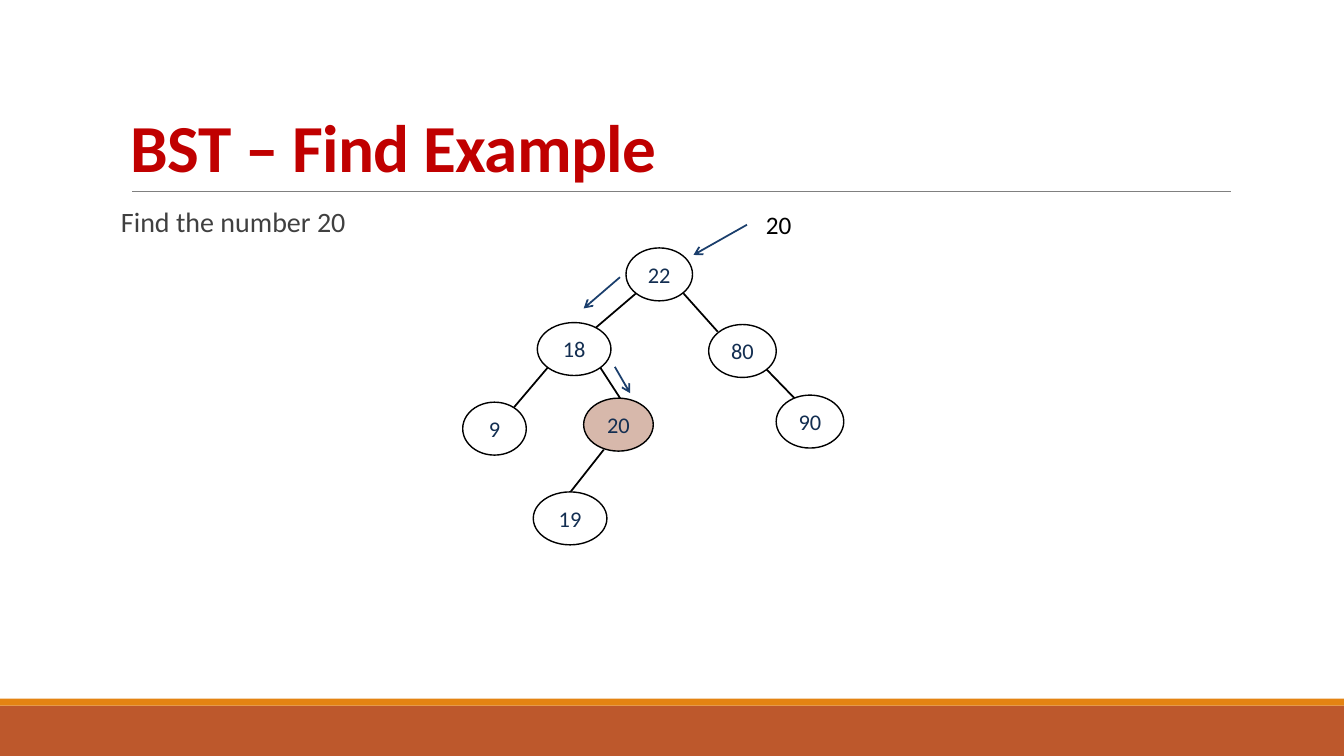
from pptx import Presentation
from pptx.dml.color import RGBColor
from pptx.enum.shapes import MSO_CONNECTOR, MSO_SHAPE
from pptx.enum.text import MSO_ANCHOR, PP_ALIGN
from pptx.oxml.ns import qn
from pptx.util import Inches, Pt
from lxml.etree import SubElement

WIDTH, HEIGHT = Inches(13.333), Inches(7.5)

COLORS = {
    "white": "FFFFFF", "black": "000000", "red": "C00000", "text": "404040",
    "navy": "132E51", "arrow": "1A3E6C", "found": "D7B8AB", "rule": "808080",
    "rust": "BD582C", "orange": "E48312",
}

BARS = [(93.33, 6.67, "rust"), (92.4, 0.93, "orange")]

NODES = [
    ("22", 46.58, 32.8, 4.95, "white"),
    ("18", 39.98, 42.67, 5.48, "white"),
    ("80", 52.73, 42.93, 5.03, "white"),
    ("9", 34.43, 53.2, 4.73, "white"),
    ("20", 43.43, 52.67, 5.18, "found"),
    ("90", 57.75, 52.27, 5.03, "white"),
    ("19", 39.68, 65.07, 5.48, "white"),
]
DEPTH = 7

EDGES = [
    (47.33, 38.8, 44.25, 43.47),
    (50.85, 38.8, 53.4, 43.87),
    (57, 48.8, 59.4, 53.2),
    (40.8, 48.53, 38.25, 53.87),
    (44.63, 48.53, 46.58, 53.87),
    (44.93, 59.47, 42.45, 65.07),
]

STEPS = [
    (55.58, 29.73, 51.6, 33.73),
    (46.13, 36.67, 43.43, 40.8),
    (45.75, 48.53, 46.88, 52),
]


def color(name):
    return RGBColor.from_string(COLORS[name])


def place(x, y, *size):
    box = (x, y, *size)
    return [int(n * (HEIGHT if i % 2 else WIDTH) / 100) for i, n in enumerate(box)]


def style(target, **values):
    for name, value in values.items():
        setattr(target, name, value)


def write(frame, text, size, tint, para={}, bold=False):
    line = frame.paragraphs[0]
    style(line, **para)
    run = line.add_run()
    run.text = text
    style(run.font, name="Calibri", size=Pt(size), bold=bold)
    run.font.color.rgb = color(tint)
    return run


def add_shape(slide, kind, box, fill, edge=None):
    shape = slide.shapes.add_shape(kind, *place(*box))
    shape.shadow.inherit = False
    shape.fill.solid()
    shape.fill.fore_color.rgb = color(fill)
    if edge:
        shape.line.color.rgb = color(edge)
        shape.line.width = Pt(1)
    else:
        shape.line.fill.background()
    return shape


def add_node(slide, text, x, y, width, fill):
    node = add_shape(slide, MSO_SHAPE.OVAL, (x, y, width, DEPTH), fill, "black")
    style(node.text_frame, vertical_anchor=MSO_ANCHOR.MIDDLE, word_wrap=False)
    write(node.text_frame, text, 16, "navy", {"alignment": PP_ALIGN.CENTER})


def add_line(slide, ends, tint, width=1.25, head=False):
    line = slide.shapes.add_connector(MSO_CONNECTOR.STRAIGHT, *place(*ends))
    line.line.color.rgb = color(tint)
    line.line.width = Pt(width)
    if head:
        SubElement(line.line._get_or_add_ln(), qn("a:tailEnd"), type="arrow")
    SubElement(line._element.spPr, qn("a:effectLst"))


def add_text(slide, box, text, size, tint, para={}, bold=False, **frame):
    area = slide.shapes.add_textbox(*place(*box)).text_frame
    style(area, **{"word_wrap": True, **frame})
    return write(area, text, size, tint, para, bold)


def main():
    deck = Presentation()
    style(deck, slide_width=WIDTH, slide_height=HEIGHT)
    slide = deck.slides.add_slide(deck.slide_layouts[6])

    for top, depth, fill in BARS:
        add_shape(slide, MSO_SHAPE.RECTANGLE, (0, top, 100, depth), fill)
    add_line(slide, (9.83, 25.33, 91.58, 25.33), "rule", 0.5)

    title = add_text(slide, (9, 4.13, 82.5, 21.2), "BST – Find Example", 48, "red",
                     {"line_spacing": 0.85}, True, vertical_anchor=MSO_ANCHOR.BOTTOM)
    title._r.get_or_add_rPr().set("spc", "-50")
    add_text(slide, (9, 26.93, 82.5, 58.67), "Find the number 20", 20, "text",
             {"line_spacing": 0.9, "space_before": Pt(12), "space_after": Pt(2)},
             margin_left=0, margin_right=0)
    add_text(slide, (56.25, 27.07, 3.6, 5.33), "20", 18, "black", word_wrap=False)

    for ends in EDGES:
        add_line(slide, ends, "black")
    for node in NODES:
        add_node(slide, *node)
    for ends in STEPS:
        add_line(slide, ends, "arrow", head=True)

    deck.save("out.pptx")


if __name__ == "__main__":
    main()
